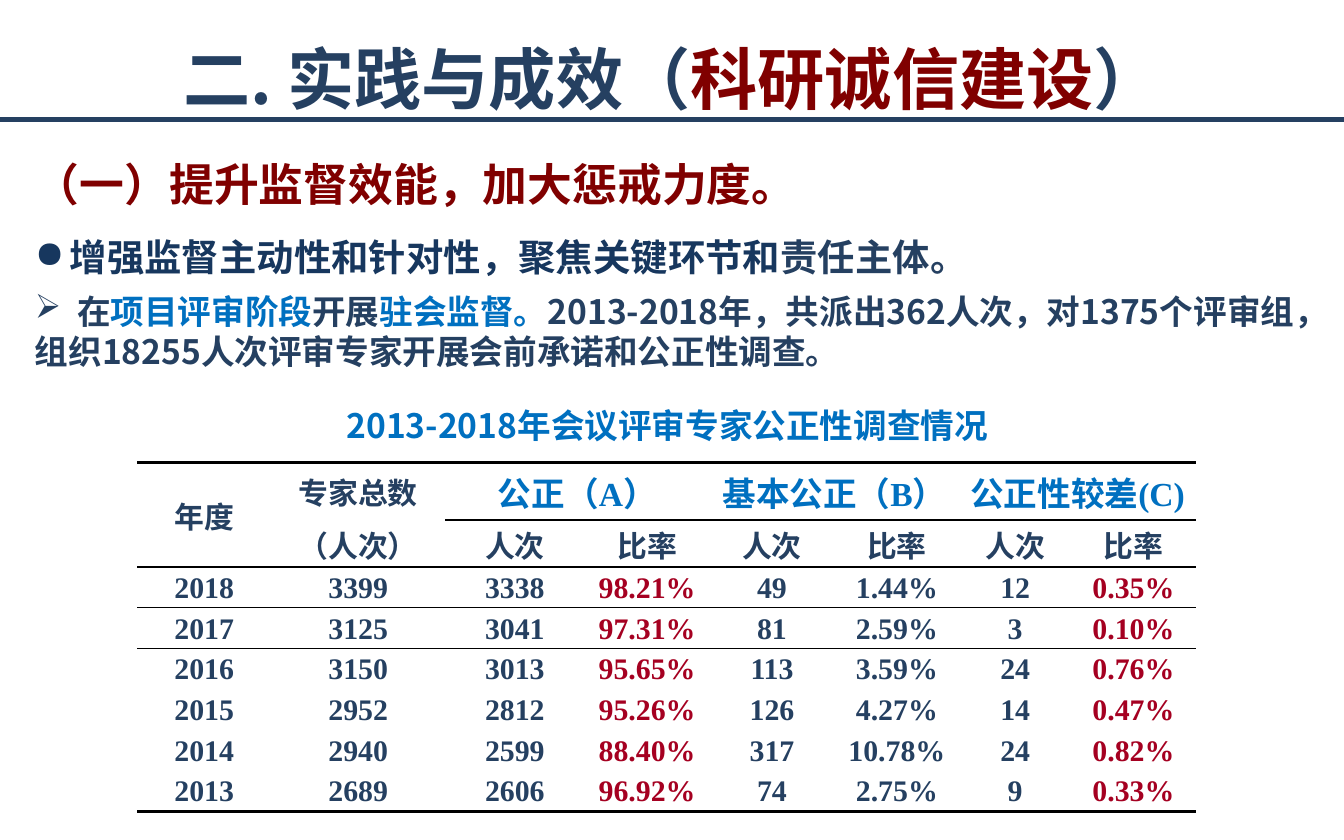
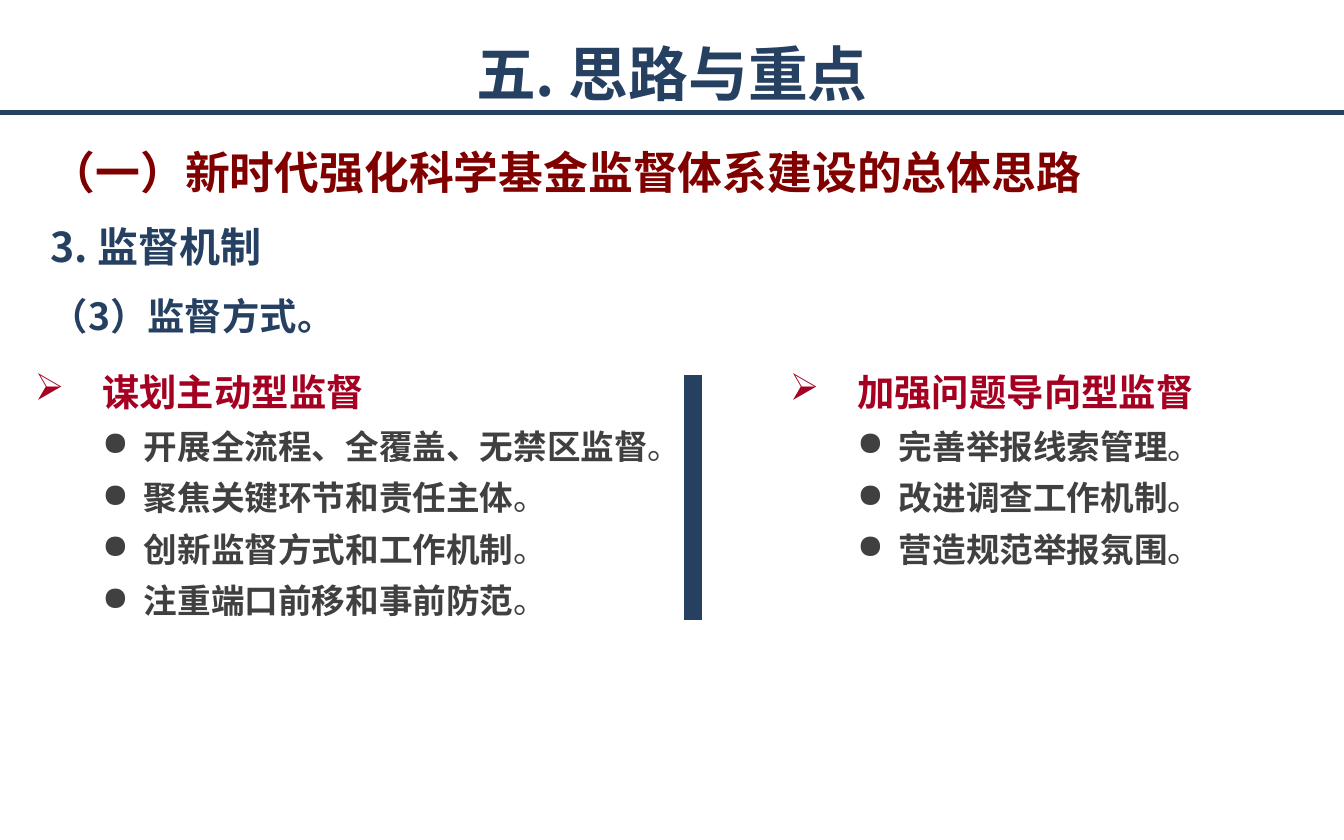
"""Builds two slides on research integrity supervision."""
from lxml.etree import SubElement
from pptx import Presentation
from pptx.dml.color import RGBColor
from pptx.enum.shapes import MSO_CONNECTOR, MSO_SHAPE
from pptx.enum.text import MSO_ANCHOR, MSO_AUTO_SIZE, PP_ALIGN
from pptx.oxml.ns import qn
from pptx.util import Cm, Pt

COLORS = {
    "navy": "254061",
    "deep": "17375E",
    "maroon": "800000",
    "crimson": "A50021",
    "blue": "0070C0",
    "gray": "404040",
    "black": "000000",
    "white": "FFFFFF",
}
SANS = "Noto Sans CJK SC"
SERIF = "Times New Roman"
NO_TABLE_STYLE = "{2D5ABB26-0587-4C30-8999-92F81FD0307C}"
TITLE_HEIGHT = 2.18

COLUMN_WIDTHS = [2.54, 3.28, 2.64, 2.36, 2.36, 2.36, 2.11, 2.36]
ROW_HEIGHTS = [1.09, 0.89] + [0.77] * 6
RATINGS = ["公正（A）", "基本公正（B）", "公正性较差(C)"]
SURVEY = [
    ["2018", "3399", "3338", "98.21%", "49", "1.44%", "12", "0.35%"],
    ["2017", "3125", "3041", "97.31%", "81", "2.59%", "3", "0.10%"],
    ["2016", "3150", "3013", "95.65%", "113", "3.59%", "24", "0.76%"],
    ["2015", "2952", "2812", "95.26%", "126", "4.27%", "14", "0.47%"],
    ["2014", "2940", "2599", "88.40%", "317", "10.78%", "24", "0.82%"],
    ["2013", "2689", "2606", "96.92%", "74", "2.75%", "9", "0.33%"],
]
HIGHLIGHTED_COLUMNS = (3, 7)
ROW_RULES = {0: 2, 1: 1, 2: 1, 3: 0.5, 8: 2}


def rgb(name):
    """Return the named colour."""
    return RGBColor.from_string(COLORS[name])


def write(para, spans, size, color, font=SANS, before=None, spacing=None, align=None):
    """Fill a paragraph with bold text; a span is a string or (text, colour, bold)."""
    para.font.name, para.font.size, para.font.bold = font, Pt(size), True
    para.font.color.rgb = rgb(color)
    SubElement(para.font._element, qn("a:ea"), typeface=SANS)
    if before is not None:
        para.space_before = Pt(before)
    if spacing is not None:
        para.line_spacing = spacing
    if align is not None:
        para.alignment = align
    for item in [spans] if isinstance(spans, str) else spans:
        text, tint, bold = (item, None, None) if isinstance(item, str) else item
        span = para.add_run()
        span.text = text
        if tint:
            span.font.color.rgb = rgb(tint)
        if bold is not None:
            span.font.bold = bold


def add_bullet(para, char, left=0, hang=0, tab=None):
    """Give a written paragraph a bullet, an indent and an optional tab stop."""
    properties = para._p.get_or_add_pPr()
    properties.set("marL", str(Cm(left)))
    properties.set("indent", str(-Cm(hang)))
    defaults = properties.find(qn("a:defRPr"))
    defaults.addprevious(SubElement(properties, qn("a:buChar"), char=char))
    if tab is not None:
        stops = SubElement(properties, qn("a:tabLst"))
        SubElement(stops, qn("a:tab"), pos=str(Cm(tab)), algn="l")
        defaults.addprevious(stops)


def add_text_frame(page, box, grow=True):
    """Add a wrapping text box and return its frame."""
    frame = page.shapes.add_textbox(*map(Cm, box)).text_frame
    frame.word_wrap = True
    frame.auto_size = MSO_AUTO_SIZE.SHAPE_TO_FIT_TEXT if grow else MSO_AUTO_SIZE.NONE
    return frame


def add_title_band(page, box, spans, size):
    """Place the title at the top of the box and a full-width rule at its bottom."""
    left, top, width, height = box
    frame = add_text_frame(page, (left, top, width, TITLE_HEIGHT), grow=False)
    frame.vertical_anchor = MSO_ANCHOR.MIDDLE
    write(frame.paragraphs[0], spans, size, "navy", spacing=1.5, align=PP_ALIGN.CENTER)
    rule_y = Cm(top + height)
    rule = page.shapes.add_connector(MSO_CONNECTOR.STRAIGHT, 0, rule_y, Cm(25.4), rule_y)
    rule.line.color.rgb = rgb("navy")
    rule.line.width = Pt(2.75)
    SubElement(rule._element.spPr, qn("a:effectLst"))


def add_supervision_summary(page, box):
    """Place the heading and the two bulleted statements."""
    frame = add_text_frame(page, box)
    heading, focus, stationing = frame.paragraphs[0], frame.add_paragraph(), frame.add_paragraph()
    write(heading, "（一）提升监督效能，加大惩戒力度。", 24, "maroon", before=12, spacing=Pt(25))
    write(focus, ["增强监督主动性和针对性，聚焦关键环节和", ("责任主体。", "navy", None)],
          20, "deep", before=12, spacing=Pt(25))
    add_bullet(focus, "●", left=0.66, hang=0.66)
    write(stationing, [
        "\t在",
        ("项目评审阶段", "blue", None),
        "开展",
        ("驻会监督。", "blue", None),
        "2013-2018年，共派出362人次，对1375个评审组，组织18255人次评审专家开展会前承诺和公正性调查。",
    ], 18, "navy", before=6)
    add_bullet(stationing, "➢", tab=0.8)


def add_border(cell, side, width):
    """Draw one black cell border ahead of the cell's fill."""
    properties = cell._tc.get_or_add_tcPr()
    line = SubElement(properties, qn(f"a:{side}"), w=str(Pt(width)))
    fill = SubElement(line, qn("a:solidFill"))
    SubElement(fill, qn("a:srgbClr"), val=COLORS["black"])
    properties.find(qn("a:solidFill")).addprevious(line)


def add_survey_table(page, box):
    """Place the caption and, below it, the survey table."""
    left, top, width, height = box
    caption = add_text_frame(page, (left, top, width, 1.02)).paragraphs[0]
    write(caption, "2013-2018年会议评审专家公正性调查情况", 18, "blue", align=PP_ALIGN.CENTER)

    ratings = [text for rating in RATINGS for text in (rating, "")]
    rows = [["年度", "专家总数"] + ratings, ["", "（人次）"] + ["人次", "比率"] * 3] + SURVEY
    table = page.shapes.add_table(len(rows), len(COLUMN_WIDTHS), Cm(left), Cm(top + 1.2),
                                  Cm(width), Cm(height - 1.2)).table
    table.first_row = table.horz_banding = False
    table._tbl.tblPr.find(qn("a:tableStyleId")).text = NO_TABLE_STYLE
    for column, size in zip(table.columns, COLUMN_WIDTHS):
        column.width = Cm(size)
    for row, size in zip(table.rows, ROW_HEIGHTS):
        row.height = Cm(size)
    table.cell(0, 0).merge(table.cell(1, 0))
    for start in (2, 4, 6):
        table.cell(0, start).merge(table.cell(0, start + 1))

    for r, texts in enumerate(rows):
        for c, text in enumerate(texts):
            cell = table.cell(r, c)
            cell.fill.solid()
            cell.fill.fore_color.rgb = rgb("white")
            cell.vertical_anchor = MSO_ANCHOR.MIDDLE
            cell.margin_left = cell.margin_right = cell.margin_top = Cm(0.03)
            cell.margin_bottom = 0
            for side, edge in (("lnT", r), ("lnB", r + 1)):
                if edge in ROW_RULES and not (edge == 1 and c < 2):
                    add_border(cell, side, ROW_RULES[edge])
            if text:
                is_rating = r == 0 and c >= 2
                is_highlight = r >= 2 and c in HIGHLIGHTED_COLUMNS
                color = "blue" if is_rating else "crimson" if is_highlight else "navy"
                write(cell.text_frame.paragraphs[0], text, 18 if is_rating else 16, color,
                      font=SERIF, align=PP_ALIGN.CENTER)


def add_outline_headings(page, box):
    """Place the three nested headings."""
    frame = add_text_frame(page, box)
    write(frame.paragraphs[0], "（一）新时代强化科学基金监督体系建设的总体思路", 24, "maroon")
    write(frame.add_paragraph(), "3. 监督机制", 22, "navy", before=12)
    write(frame.add_paragraph(), "（3）监督方式。", 20, "navy", before=12)


def add_approach(page, box, heading, measures):
    """Place one supervision approach with its measures."""
    frame = add_text_frame(page, box)
    write(frame.paragraphs[0], heading, 20, "crimson", before=6)
    add_bullet(frame.paragraphs[0], "➢", left=1.27, hang=1.27)
    for measure in measures:
        para = frame.add_paragraph()
        para.level = 1
        write(para, [measure, ("。", None, False)], 18, "gray", before=6)
        add_bullet(para, "●", left=2.06, hang=0.79)


def add_divider(page, box):
    """Place the upright bar between the two approaches."""
    bar = page.shapes.add_shape(MSO_SHAPE.RECTANGLE, *map(Cm, box))
    bar.shadow.inherit = False
    bar.fill.solid()
    bar.fill.fore_color.rgb = rgb("navy")
    bar.line.color.rgb = rgb("white")
    bar.line.width = Pt(2)


def build_results_page(page):
    """Compose the slide on practice and results."""
    title = ["二. 实践与成效（", ("科研诚信建设", "maroon", None), "）"]
    add_title_band(page, (1.27, 0, 22.86, 2.26), title, 36)
    add_supervision_summary(page, (0.41, 2.97, 24.61, 4.22))
    add_survey_table(page, (2.59, 7.54, 20.04, 7.8))


def build_priorities_page(page):
    """Compose the slide on approach and priorities."""
    add_title_band(page, (0, -0.05, 25.4, 2.18), "五. 思路与重点", 32)
    add_outline_headings(page, (0.71, 2.62, 24.51, 3.94))
    add_approach(page, (14.68, 6.86, 10.31, 4.06), "加强问题导向型监督",
                 ["完善举报线索管理", "改进调查工作机制", "营造规范举报氛围"])
    add_approach(page, (0.41, 6.86, 13.69, 5.05), "谋划主动型监督",
                 ["开展全流程、全覆盖、无禁区监督", "聚焦关键环节和责任主体",
                  "创新监督方式和工作机制", "注重端口前移和事前防范"])
    add_divider(page, (12.9, 7.06, 0.41, 4.7))


def main():
    """Build and save the deck."""
    deck = Presentation()
    deck.slide_width, deck.slide_height = Cm(25.4), Cm(15.88)
    for build in (build_results_page, build_priorities_page):
        build(deck.slides.add_slide(deck.slide_layouts[6]))
    deck.save("out.pptx")


if __name__ == "__main__":
    main()
